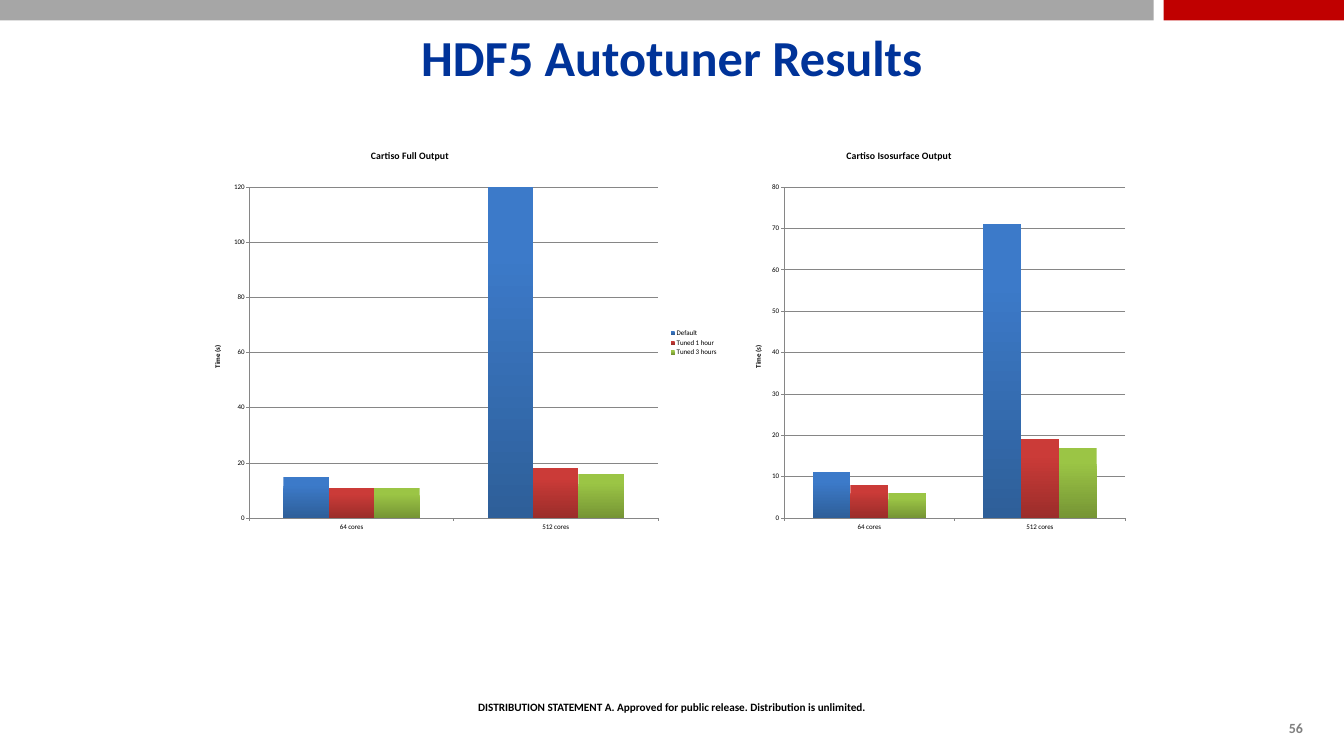
from lxml import etree
from pptx import Presentation
from pptx import util as u
from pptx.chart import data
from pptx.dml import color
from pptx.enum import chart as ch, shapes, text
from pptx.oxml import ns


def rgb(value):
    return color.RGBColor.from_string(value)


def write(frame, content, size, ink, align):
    frame.word_wrap = True
    paragraph = frame.paragraphs[0]
    paragraph.alignment = align
    run = paragraph.add_run()
    run.text = content
    run.font.size = u.Pt(size)
    run.font.name = "Calibri"
    run.font.bold = True
    run.font.color.rgb = rgb(ink)


deck = Presentation()
deck.slide_width, deck.slide_height = u.Pt(1920), u.Pt(1080)
slide = deck.slides.add_slide(deck.slide_layouts[5])
CENTER, RIGHT = text.PP_ALIGN.CENTER, text.PP_ALIGN.RIGHT

for left, width, tint in [(1662.5, 257.5, "C00000"), (0, 1648, "A6A6A6")]:
    band = slide.shapes.add_shape(
        shapes.MSO_SHAPE.RECTANGLE, u.Pt(left), u.Pt(0), u.Pt(width), u.Pt(29))
    band.shadow.inherit = False
    band.fill.solid()
    band.fill.fore_color.rgb = rgb(tint)
    band.line.fill.background()

heading = slide.shapes.title
heading.left, heading.top = u.Pt(240), u.Pt(34)
heading.width, heading.height = u.Pt(1440), u.Pt(94)
heading.text_frame.vertical_anchor = text.MSO_ANCHOR.MIDDLE
write(heading.text_frame, "HDF5 Autotuner Results", 72, "003399", CENTER)

footers = [
    ("56", 1758.5, 1024, 110, 32, 20, "808080", RIGHT),
    ("DISTRIBUTION STATEMENT A. Approved for public release. Distribution is unlimited.",
     194.5, 996.5, 1531, 84, 16, "000000", CENTER),
]
for content, left, top, width, height, size, ink, align in footers:
    footer = slide.shapes.add_textbox(u.Pt(left), u.Pt(top), u.Pt(width), u.Pt(height))
    write(footer.text_frame, content, size, ink, align)

gradients = [("3C7AC9", "2E5F99"), ("CB3B38", "9B2D2A"), ("9BC545", "769535")]
timings = [
    ("Cartiso Full Output", 289.5, 743.5, 0.32, 120, 20, True,
     [("Default", (15, 120)), ("Tuned 1 hour", (11, 18)), ("Tuned 3 hours", (11, 16))]),
    ("Cartiso Isosurface Output", 1062, 556.5, 0.26, 80, 10, False,
     [("Series 1", (11, 71)), ("Series 2", (8, 19)), ("Series 3", (6, 17))]),
]
for caption, left, width, caption_x, top_time, step, has_key, runs in timings:
    times = data.CategoryChartData()
    times.categories = ["64 cores", "512 cores"]
    for name, values in runs:
        times.add_series(name, values)
    chart = slide.shapes.add_chart(
        ch.XL_CHART_TYPE.COLUMN_CLUSTERED,
        u.Pt(left), u.Pt(209.5), u.Pt(width), u.Pt(560), times).chart
    chart.font.size = u.Pt(10)
    chart.font.name = "Calibri"
    chart.font.color.rgb = rgb("000000")

    write(chart.chart_title.text_frame, caption, 14, "000000", CENTER)
    chart.chart_title.include_in_layout = False
    caption_xml = chart._chartSpace.chart.find(ns.qn("c:title"))
    layout = caption_xml.find(ns.qn("c:layout"))
    if layout is None:
        layout = etree.Element(ns.qn("c:layout"))
        caption_xml.find(ns.qn("c:tx")).addnext(layout)
    manual = etree.SubElement(layout, ns.qn("c:manualLayout"))
    for tag, value in [("xMode", "edge"), ("yMode", "edge"), ("x", caption_x), ("y", 0)]:
        etree.SubElement(manual, ns.qn("c:" + tag)).set("val", str(value))

    chart.has_legend = has_key
    if has_key:
        chart.legend.position = ch.XL_LEGEND_POSITION.RIGHT
        chart.legend.include_in_layout = False

    seconds, cores = chart.value_axis, chart.category_axis
    seconds.minimum_scale, seconds.maximum_scale = 0, top_time
    seconds.major_unit = step
    seconds.has_major_gridlines = True
    seconds.major_gridlines.format.line.color.rgb = rgb("868686")
    write(seconds.axis_title.text_frame, "Time (s)", 10, "000000", CENTER)
    for axis in (seconds, cores):
        axis.major_tick_mark = ch.XL_TICK_MARK.OUTSIDE
        axis.format.line.color.rgb = rgb("868686")

    bars = chart.plots[0]
    bars.gap_width, bars.overlap = 150, 0
    bars.vary_by_categories = False
    for series, shades in zip(bars.series, gradients):
        series.invert_if_negative = False
        fill = series.format.fill
        fill.gradient()
        fill.gradient_angle = 270
        for stop, shade, position in zip(fill.gradient_stops, shades, (0.2, 1)):
            stop.color.rgb = rgb(shade)
            stop.position = position

deck.save("out.pptx")
